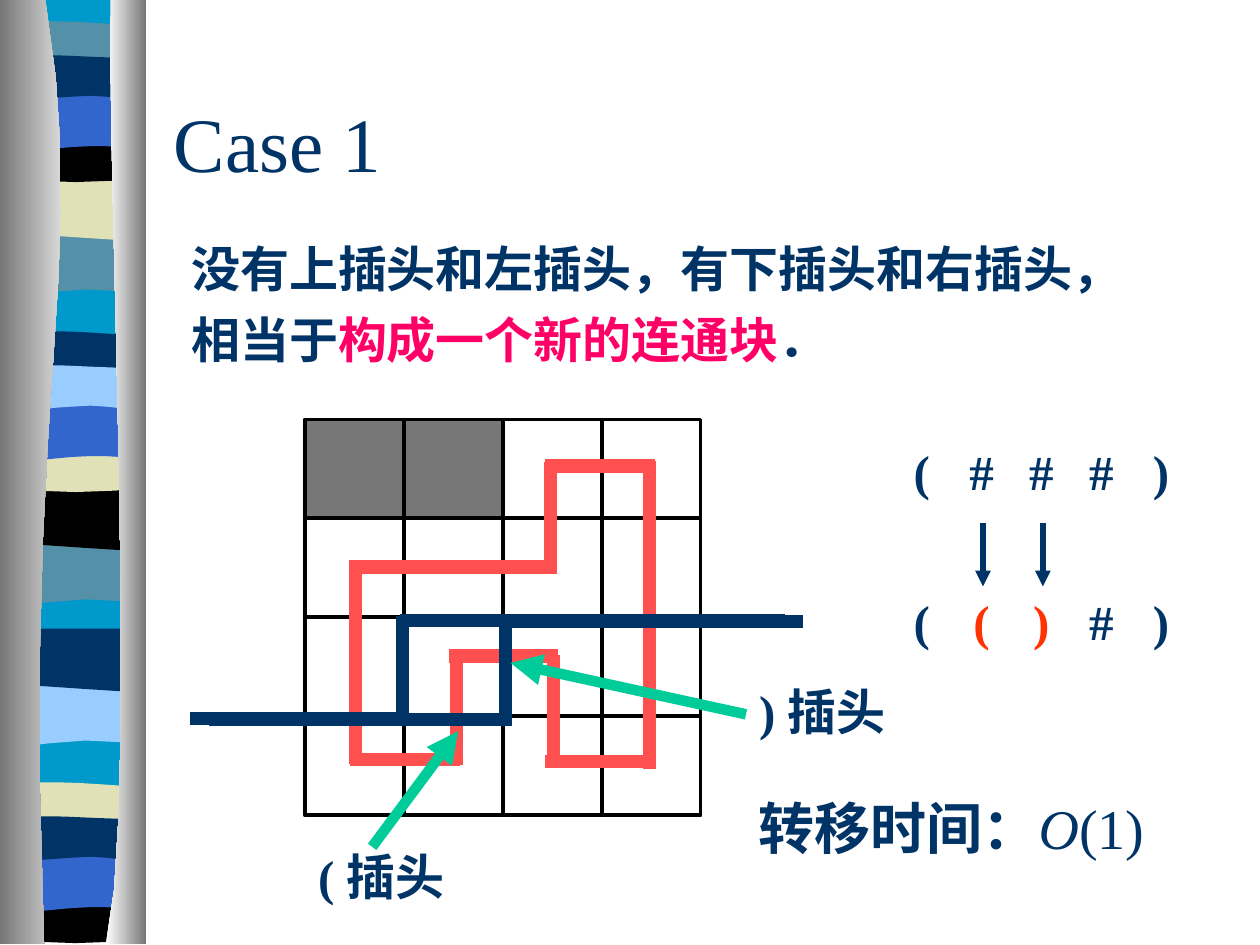
from dataclasses import dataclass
from typing import NamedTuple

from lxml.etree import SubElement
from pptx import Presentation
from pptx.dml.color import RGBColor
from pptx.enum.shapes import MSO_CONNECTOR as Conn, MSO_SHAPE as Kind
from pptx.enum.text import MSO_ANCHOR as Anchor, PP_ALIGN as Align
from pptx.oxml.ns import qn
from pptx.util import Inches, Pt

NAVY, RED, GREEN, PINK = "003366", "FF5050", "00CC99", "FF0066"
TEAL, SAND, SKY, BLUE, BLACK = "5490A8", "E1E1B7", "99CCFF", "3366CC", "000000"
GREY, ORANGE = "777777", "FF3300"
SERIF, HAN = "Times New Roman", "Noto Sans CJK SC"

deck = Presentation()
deck.slide_width, deck.slide_height = Inches(10), Inches(7.5)
slide = deck.slides.add_slide(deck.slide_layouts[5])
shapes = slide.shapes


@dataclass
class Grid:
    """Maps columns and rows to places on the slide, in inches."""
    left: float
    top: float
    col: float
    row: float

    def at(self, x: float, y: float) -> tuple:
        return Inches(self.left + x * self.col), Inches(self.top + y * self.row)

    def size(self, w: float, h: float) -> tuple:
        return Inches(w * self.col), Inches(h * self.row)


PAGE = Grid(0, 0, 0.1, 0.075)         # percent of the slide
BOARD = Grid(2.42, 3.33, 0.785, 0.785)
STATE = Grid(7.08, 3.5, 0.475, 1.19)  # bracket states


class Line(NamedTuple):
    x1: float
    y1: float
    x2: float
    y2: float


class Band(NamedTuple):
    steps: list    # one point is a line, three are a Bézier curve
    hues: list
    shifts: tuple


class Note(NamedTuple):
    box: tuple     # percent of the slide
    runs: list     # (text, colour)
    font: str = HAN
    size: float = 28
    lead: float = 1.0


def rgb(hue: str) -> RGBColor:
    return RGBColor.from_string(hue)


def style(font, name: str, size: float, hue: str, bold: bool = True) -> None:
    font.name, font.size, font.bold = name, Pt(size), bold
    font.color.rgb = rgb(hue)


def trace(steps: list, shift: float, cuts: int) -> list:
    pts = [steps[0][0]]
    for step in steps[1:]:
        if len(step) == 1:
            pts.append(step[0])
            continue
        ends = [pts[-1], *step]
        for i in range(1, cuts + 1):
            t = i / cuts
            parts = ((1 - t) ** 3, 3 * t * (1 - t) ** 2, 3 * t * t * (1 - t), t ** 3)
            pts.append(tuple(sum(k * p[n] for k, p in zip(parts, ends)) for n in (0, 1)))
    return [(Inches(x), Inches(y + shift)) for x, y in pts]


def outline(steps: list, shift: float = 0, cuts: int = 4):
    pts = trace(steps, shift, cuts)
    pen = shapes.build_freeform(*pts[0], scale=1.0)
    pen.add_line_segments(pts[1:], close=True)
    form = pen.convert_to_shape()
    form.shadow.inherit = False
    form.line.fill.background()
    return form


def fill(form, hue: str) -> None:
    form.fill.solid()
    form.fill.fore_color.rgb = rgb(hue)


def fade(form, first: str, last: str) -> None:
    form.fill.gradient()
    form.fill.gradient_angle = 0
    for stop, hue in zip(form.fill.gradient_stops, (first, last)):
        stop.color.rgb = rgb(hue)


def stroke(grid: Grid, part: Line, hue: str, width: float, arrow: bool = False) -> None:
    line = shapes.add_connector(Conn.STRAIGHT, *grid.at(part.x1, part.y1),
                                *grid.at(part.x2, part.y2))
    line.line.color.rgb, line.line.width = rgb(hue), Pt(width)
    if arrow:
        SubElement(line.line._get_or_add_ln(), qn("a:tailEnd"), type="triangle")
    SubElement(line._element.spPr, qn("a:effectLst"))


def write(note: Note):
    x, y, w, h = note.box
    frame = shapes.add_textbox(*PAGE.at(x, y), *PAGE.size(w, h)).text_frame
    frame.word_wrap = True
    par = frame.paragraphs[0]
    par.space_before, par.line_spacing = Pt(note.size / 2), note.lead
    style(par.font, note.font, note.size, NAVY)
    SubElement(par.font._element, qn("a:ea"), typeface=HAN)
    for text, hue in note.runs:
        run = par.add_run()
        run.text = text
        run.font.color.rgb = rgb(hue)
    return par


def token(col: int, row: int, sign: str, hue: str) -> None:
    frame = shapes.add_textbox(*STATE.at(col, row), Inches(0.47), Inches(0.47)).text_frame
    frame.word_wrap, frame.vertical_anchor = False, Anchor.MIDDLE
    par = frame.paragraphs[0]
    par.text, par.alignment = sign, Align.CENTER
    style(par.font, SERIF, 28, hue)


# Side ribbon: six wavy bands, each used three times
L, R = 0.05, 1.14
NEAR, FAR = (0, 2.46, 3.58), (0, 2.46, 6.04)
BANDS = [
    Band([[(R, 1.85)], [(R, 2.32)], [(0.39, 2.24), (0.24, 2.4), (L, 2.32)],
          [(L, 1.85)]], [TEAL, TEAL, SKY], NEAR),
    Band([[(R, 1.41)], [(R, 1.88)], [(0.96, 1.96), (0.39, 1.82), (L, 1.88)],
          [(L, 1.41)]], [SAND, BLACK, NAVY], NEAR),
    Band([[(R, 0.21)], [(R, 0.45)], [(0.96, 0.5), (0.24, 0.5), (L, 0.45)], [(L, 0.21)],
          [(0.12, 0.16), (0.29, 0.17), (0.47, 0.17)],
          [(0.65, 0.17), (1, 0.2), (R, 0.21)]], [TEAL, NAVY, SAND], FAR),
    Band([[(R, 1.08)], [(R, 1.4)], [(0.96, 1.46), (0.24, 1.46), (L, 1.4)], [(L, 1.08)],
          [(0.72, 1.13), (0.91, 1.08), (R, 1.08)]], [BLACK, SAND, BLACK], FAR),
    Band([[(R, 0.74)], [(R, 1.21)], [(0.97, 1.16), (0.9, 1.16), (0.72, 1.16)],
          [(0.54, 1.16), (0.22, 1.21), (L, 1.21)], [(L, 0.74)]], [BLUE] * 3, FAR),
    Band([[(R, 0.46)], [(R, 0.76)], [(1.07, 0.82), (0.9, 0.76), (0.72, 0.76)],
          [(0.54, 0.76), (0.17, 0.82), (L, 0.76)], [(L, 0.46)],
          [(0.21, 0.41), (0.79, 0.46), (0.97, 0.46)]], [NAVY, SKY, NAVY], FAR),
]
fill(outline([[(R, 0)], [(R, 7.48)], [(L, 7.48)], [(L, 0)]]), "0099CC")
for turn in range(3):
    for band in BANDS:
        fill(outline(band.steps, band.shifts[turn]), band.hues[turn])
fade(outline([[(0.36, 0)], [(0.72, 2.16), (0.17, 2.96), (0.35, 7.49)],
              [(0, 7.49)], [(0, 0)]], cuts=10), "767676", "D8D8D8")
fade(outline([[(0.88, 0)], [(0.84, 1.25), (1.11, 6.46), (0.84, 7.49)],
              [(1.16, 7.49)], [(1.16, 0)]], cuts=10), "FFFFFF", "767676")

# Title
title = shapes.title
title.left, title.top = PAGE.at(12.8, 6.67)
title.width, title.height = PAGE.size(85, 16.67)
title.text_frame.vertical_anchor = Anchor.MIDDLE
head = title.text_frame.paragraphs[0]
head.text, head.alignment = "Case 1", Align.LEFT
style(head.font, SERIF, 44, NAVY, False)

# Board
for i in range(16):
    cell = shapes.add_shape(Kind.RECTANGLE, *BOARD.at(i % 4, i // 4), *BOARD.size(1, 1))
    cell.shadow.inherit = False
    cell.line.color.rgb, cell.line.width = rgb(BLACK), Pt(2.25)
    if i < 2:
        fill(cell, GREY)
    else:
        cell.fill.background()

# Loop, then the old and new frontier, then the pointers
LOOP = [Line(0.51, 1.48, 0.51, 3.48), Line(0.45, 1.49, 2.55, 1.49),
        Line(2.48, 0.43, 2.48, 1.53), Line(2.43, 0.47, 3.54, 0.47),
        Line(3.48, 0.42, 3.48, 3.53), Line(2.43, 3.46, 3.54, 3.46),
        Line(2.51, 2.38, 2.51, 3.49), Line(1.46, 2.39, 2.56, 2.39),
        Line(1.53, 2.36, 1.53, 3.49), Line(0.46, 3.44, 1.57, 3.44)]
FRONT = [Line(-1.16, 3.02, 1.01, 3.02), Line(0.96, 2.03, 4.85, 2.03),
         Line(0.99, 1.99, 0.99, 3.04), Line(-0.97, 3.03, 2.09, 3.03),
         Line(2, 2.04, 5.04, 2.04), Line(2.03, 2, 2.03, 3.06)]
for hue, parts in ((RED, LOOP), (NAVY, FRONT)):
    for part in parts:
        stroke(BOARD, part, hue, 7.5)
for part in (Line(4.46, 2.98, 2.08, 2.46), Line(0.68, 4.32, 1.55, 3.15)):
    stroke(BOARD, part, GREEN, 6, arrow=True)

# Bracket states before and after
for row, signs in enumerate(("(###)", "(()#)")):
    for col, sign in enumerate(signs):
        token(col, row, sign, ORANGE if row and col in (1, 2) else NAVY)
for col in (1.52, 2.52):
    stroke(STATE, Line(col, 0.55, col, 0.97), NAVY, 3, arrow=True)

# Notes
write(Note((14.2, 23.33, 75, 16.27),
           [("没有上插头和左插头，有下插头和右插头，相当于", NAVY),
            ("构成一个新的连通块", PINK), ("．", NAVY)], lead=1.2))
write(Note((58.3, 71.47, 15.8, 7.6), [(" ) 插头", NAVY)], SERIF))
write(Note((23.3, 88.93, 15.8, 7.6), [(" ( 插头", NAVY)], SERIF))
cost = write(Note((59.2, 83.33, 37.5, 8.4),
                  [("转移时间：", NAVY), ("O", NAVY), ("(1)", NAVY)], size=32))
for run in cost.runs[1:]:
    run.font.name, run.font.bold = SERIF, False
cost.runs[1].font.italic = True

deck.save("out.pptx")
